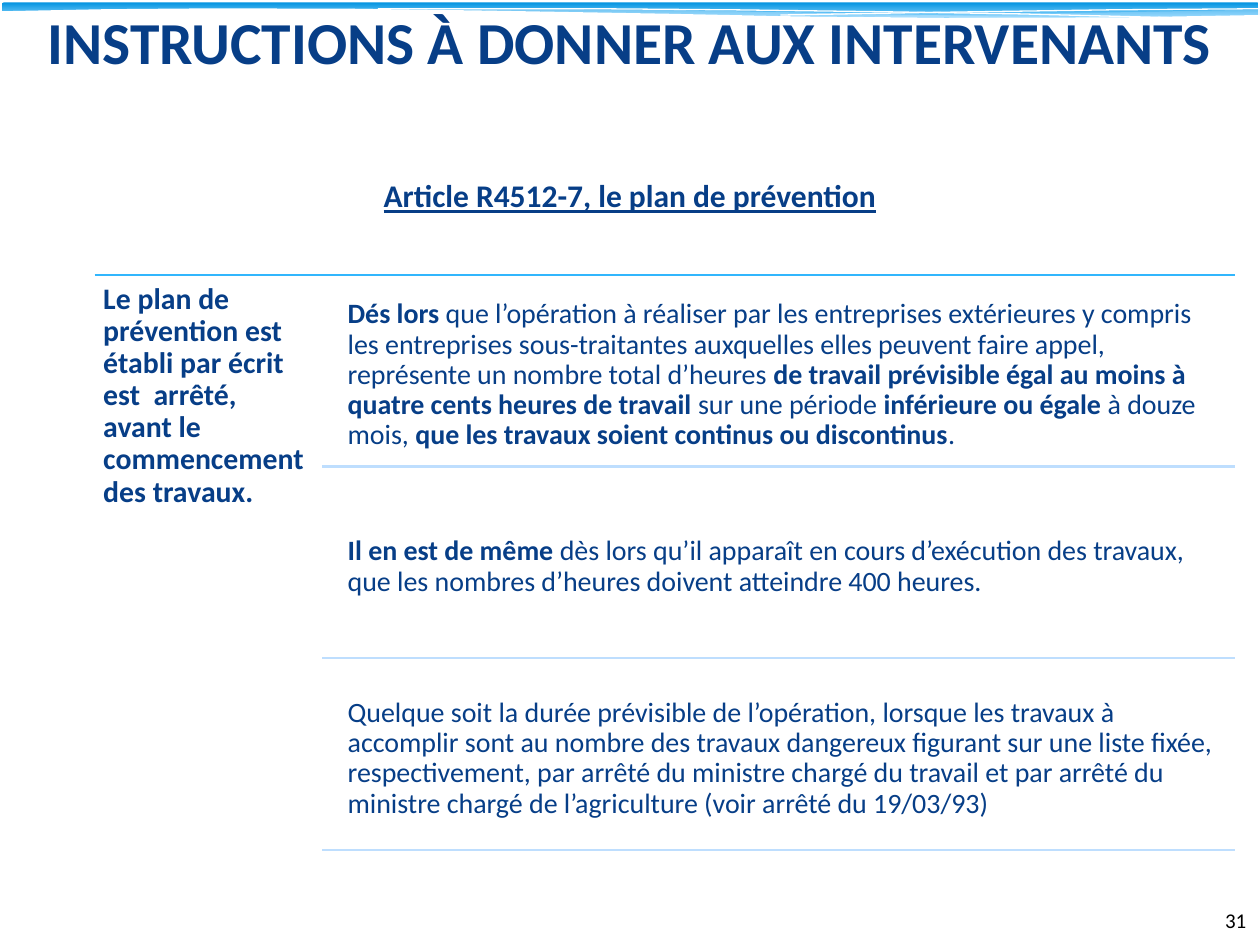
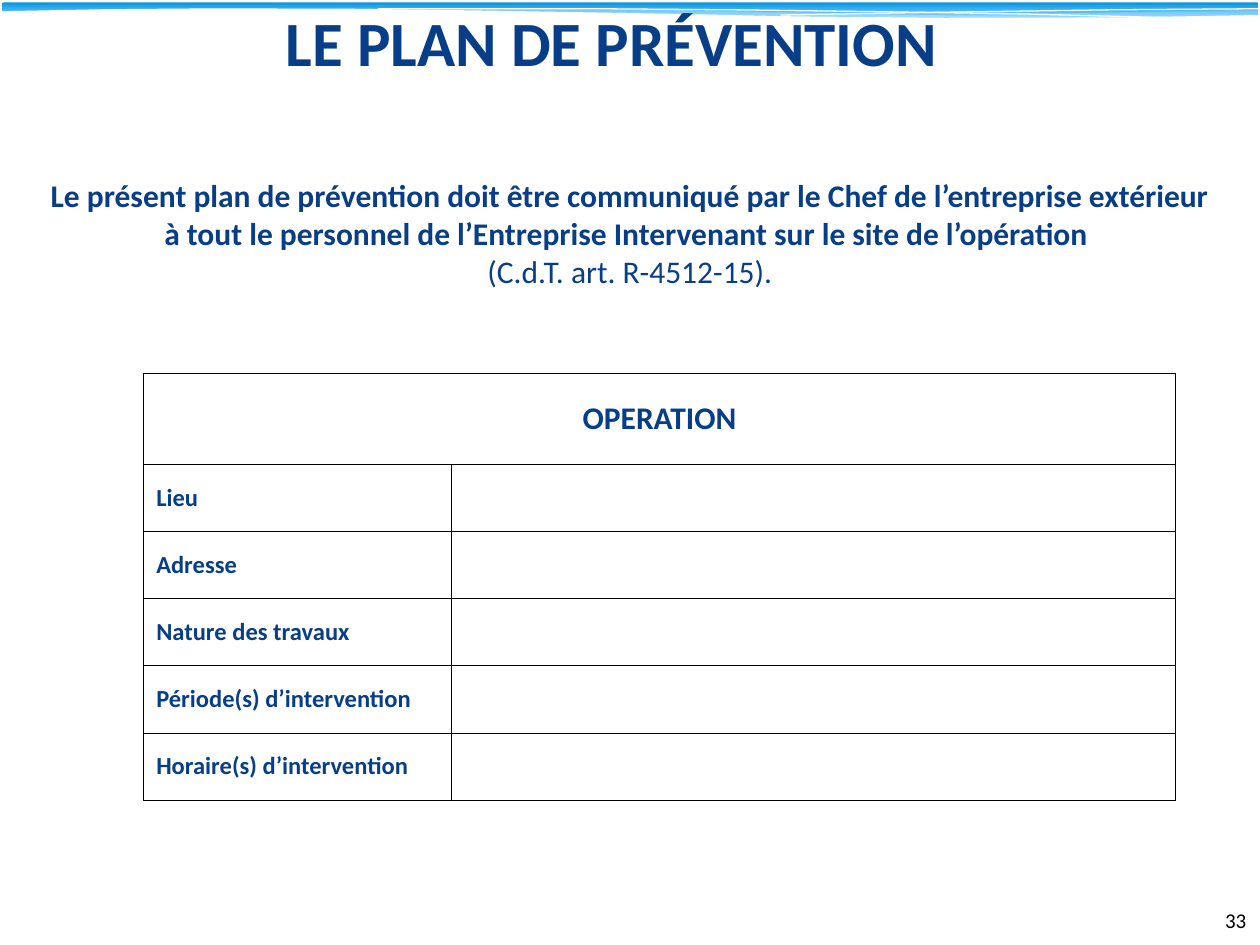
"""Build two slides on the prevention plan: its legal basis and its form."""
import lxml.etree
import pptx
import pptx.dml.color
import pptx.enum.shapes
import pptx.enum.text
import pptx.oxml.ns
import pptx.util

Pt = pptx.util.Pt
qn = pptx.oxml.ns.qn
Align = pptx.enum.text.PP_ALIGN
Anchor = pptx.enum.text.MSO_ANCHOR

FONT = "Calibri"
HUES = {"navy": "073E87", "black": "000000", "white": "FFFFFF", "deep": "0293E0",
        "light": "83D3FE", "mist": "C6E7FC", "sky": "31B6FD", "pale": "BEDEFE"}

MISTS = [
    (29, [(720, 5.5), (633, 7.2), (482.4, 9.4), (565, 10.1), (640, 10.1),
          (700, 9), (720, 8.6)]),
    (40, [(657.4, 10.1), (568, 9.4), (458, 7.2), (391, 5.9), (300, 5), (198.7, 5),
          (256, 5.8), (322, 7), (410, 8.6), (497, 9.6), (580, 10.1)]),
]
CURVES = [
    [(216, 5), (337, 5), (422, 5.7), (507, 6.8), (583, 8), (668, 10.1)],
    [(446, 8.6), (527, 7.2), (637, 5.6), (720, 5)],
]
COVER = [(720, 8.6), (640, 10), (540, 10.2), (455, 9.4), (382, 7.9), (278, 6.1),
         (200, 5), (120, 4.8), (60, 5.3), (0, 6.5), (0, 13.7), (720, 13.7)]

LEAD = ("Le plan de prévention est établi par écrit est  arrêté, \n"
        "avant le commencement des travaux.")
CASES = [
    ["Dés lors ",
     "que l’opération à réaliser par les entreprises extérieures y compris les "
     "entreprises sous-traitantes auxquelles elles peuvent faire appel, représente "
     "un nombre total d’heures ",
     "de travail prévisible égal au moins à quatre cents heures de travail ",
     "sur une période ", "inférieure ou égale ", "à douze mois, ",
     "que les travaux soient continus ou discontinus", "."],
    ["Il en est de même ",
     "dès lors qu’il apparaît en cours d’exécution des travaux, que les nombres "
     "d’heures doivent atteindre 400 heures."],
    ["",
     "Quelque soit la durée prévisible de l’opération, lorsque les travaux à "
     "accomplir sont au nombre des travaux dangereux figurant sur une liste fixée, "
     "respectivement, par arrêté du ministre chargé du travail et par arrêté du "
     "ministre chargé de l’agriculture (voir arrêté du 19/03/93)"],
]
NOTICE = ["Le présent plan de prévention doit être communiqué par le Chef de "
          "l’entreprise extérieur\nà tout le personnel de l’Entreprise Intervenant "
          "sur le site de l’opération \n", "(C.d.T. art. R-4512-15)."]
FIELDS = ["Lieu", "Adresse", "Nature des travaux", "Période(s) d’intervention",
          "Horaire(s) d’intervention"]


def shade(hue):
    """Return the named colour."""
    return pptx.dml.color.RGBColor.from_string(HUES[hue])


def style(font, size, bold=False, hue="navy"):
    """Set the look of a font."""
    font.name, font.size, font.bold = FONT, Pt(size), bold
    font.color.rgb = shade(hue)


def write(para, parts, size, hue="navy"):
    """Fill a paragraph with parts that are bold and plain by turns."""
    for rank, part in enumerate(parts):
        for row, line in enumerate(part.split("\n")):
            if row:
                para.add_line_break()
            if line:
                run = para.add_run()
                run.text = line
                style(run.font, size, rank % 2 == 0, hue)


def label(slide, area, parts, size, align=Align.LEFT, anchor=Anchor.TOP,
          inset=None, hue="navy"):
    """Add a wrapped text box and return its paragraph."""
    frame = slide.shapes.add_textbox(*map(Pt, area)).text_frame
    frame.word_wrap, frame.vertical_anchor = True, anchor
    if inset is not None:
        frame.margin_left = frame.margin_right = Pt(inset)
        frame.margin_top = frame.margin_bottom = Pt(inset)
    para = frame.paragraphs[0]
    para.alignment = align
    write(para, parts, size, hue)
    return para


def outline(slide, spots, close=True):
    """Add a freeform through the given spots."""
    first, *rest = [(Pt(x), Pt(y)) for x, y in spots]
    pen = slide.shapes.build_freeform(*first)
    pen.add_line_segments(rest, close=close)
    shape = pen.convert_to_shape()
    shape.shadow.inherit = False
    return shape


def patch(slide, spots, hue, alpha=100):
    """Add a filled outline without a line."""
    shape = outline(slide, spots)
    shape.line.fill.background()
    shape.fill.solid()
    shape.fill.fore_color.rgb = shade(hue)
    if alpha < 100:
        tint = next(shape.fill._xPr.iter(qn("a:srgbClr")))
        lxml.etree.SubElement(tint, qn("a:alpha"), val=str(alpha * 1000))


def band(slide):
    """Add the blue wave along the top edge."""
    kind = pptx.enum.shapes.MSO_SHAPE.ROUNDED_RECTANGLE
    bar = slide.shapes.add_shape(kind, Pt(1.44), Pt(1.44), Pt(717.8), Pt(9.36))
    bar.adjustments[0] = 0.07
    bar.shadow.inherit = False
    bar.line.fill.background()
    bar.fill.gradient()
    bar.fill.gradient_angle = 270
    for stop, hue, place in zip(bar.fill.gradient_stops, ("deep", "light"), (0, 0.9)):
        stop.color.rgb, stop.position = shade(hue), place
    for alpha, spots in MISTS:
        patch(slide, spots, "mist", alpha)
    for spots in CURVES:
        curve = outline(slide, spots, close=False)
        curve.fill.background()
        curve.line.color.rgb, curve.line.width = shade("white"), Pt(0)
    patch(slide, COVER, "white")


def start(deck, title, size, left, width, number):
    """Add a slide with its band, title and number."""
    slide = deck.slides.add_slide(deck.slide_layouts[6])
    band(slide)
    label(slide, (left, 9.4, width, 28), [title], size, Align.CENTER, Anchor.MIDDLE)
    label(slide, (551.5, 511.2, 167.8, 28.8), ["", number], 12, Align.RIGHT,
          Anchor.MIDDLE, hue="black")
    return slide


def intro(slide, parts, height):
    """Add the centred text under the title."""
    para = label(slide, (0, 97.2, 720, height), parts, 18, Align.CENTER)
    return para


def rule(slide, left, top, hue):
    """Add a level line that ends at the right margin."""
    kind = pptx.enum.shapes.MSO_CONNECTOR.STRAIGHT
    line = slide.shapes.add_connector(kind, Pt(left), Pt(top), Pt(705.6), Pt(top))
    line.line.color.rgb, line.line.width = shade(hue), Pt(1.25)
    lxml.etree.SubElement(line._element.spPr, qn("a:effectLst"))


def cases(slide):
    """Add the lead text and the ruled list of cases."""
    top, step = 157, 109.6
    rule(slide, 54, top, "sky")
    lead = label(slide, (54, top, 130.3, 334.8), [LEAD], 17, inset=5)
    lead.line_spacing = 0.9
    for rank, parts in enumerate(CASES):
        head = top + rank * step
        para = label(slide, (193.7, head + 5.2, 511.9, 104.4), parts, 16,
                     anchor=Anchor.MIDDLE, inset=5)
        para.line_spacing = 0.9
        rule(slide, 184.3, head + step, "pale")


def border(cell):
    """Draw thin black lines round a cell."""
    props = cell._tc.get_or_add_tcPr()
    for rank, side in enumerate("LRTB"):
        line = lxml.etree.Element(qn(f"a:ln{side}"), w=str(Pt(0.5)))
        fill = lxml.etree.SubElement(line, qn("a:solidFill"))
        lxml.etree.SubElement(fill, qn("a:srgbClr"), val=HUES["black"])
        props.insert(rank, line)


def form(slide):
    """Add the table to fill in for the work."""
    widths, heights = [175.7, 413.9], [52] + [38.4] * len(FIELDS)
    grid = slide.shapes.add_table(len(heights), 2, Pt(82.1), Pt(213.3),
                                  Pt(sum(widths)), Pt(sum(heights))).table
    grid.first_row = grid.horz_banding = False
    for col, width in zip(grid.columns, widths):
        col.width = Pt(width)
    for row, height in zip(grid.rows, heights):
        row.height = Pt(height)
    grid.cell(0, 0).merge(grid.cell(0, 1))
    for cell in (cell for row in grid.rows for cell in row.cells):
        cell.fill.background()
        border(cell)
        cell.vertical_anchor = Anchor.MIDDLE
    for rank, text in enumerate(["OPERATION"] + FIELDS):
        para = grid.cell(rank, 0).text_frame.paragraphs[0]
        write(para, [text], 14 if rank else 18)
        para.alignment = Align.LEFT if rank else Align.CENTER


def main():
    """Build and save the deck."""
    deck = pptx.Presentation()
    deck.slide_width, deck.slide_height = Pt(720), Pt(540)

    slide = start(deck, "INSTRUCTIONS À DONNER AUX INTERVENANTS", 34, 0, 719.3, "31")
    para = intro(slide, ["Article R4512-7, le plan de prévention"], 29)
    para.runs[0].font.underline = True
    cases(slide)

    slide = start(deck, "LE PLAN DE PRÉVENTION", 36, -2.2, 703.4, "33")
    intro(slide, NOTICE, 72.7)
    form(slide)

    deck.save("out.pptx")


if __name__ == "__main__":
    main()
